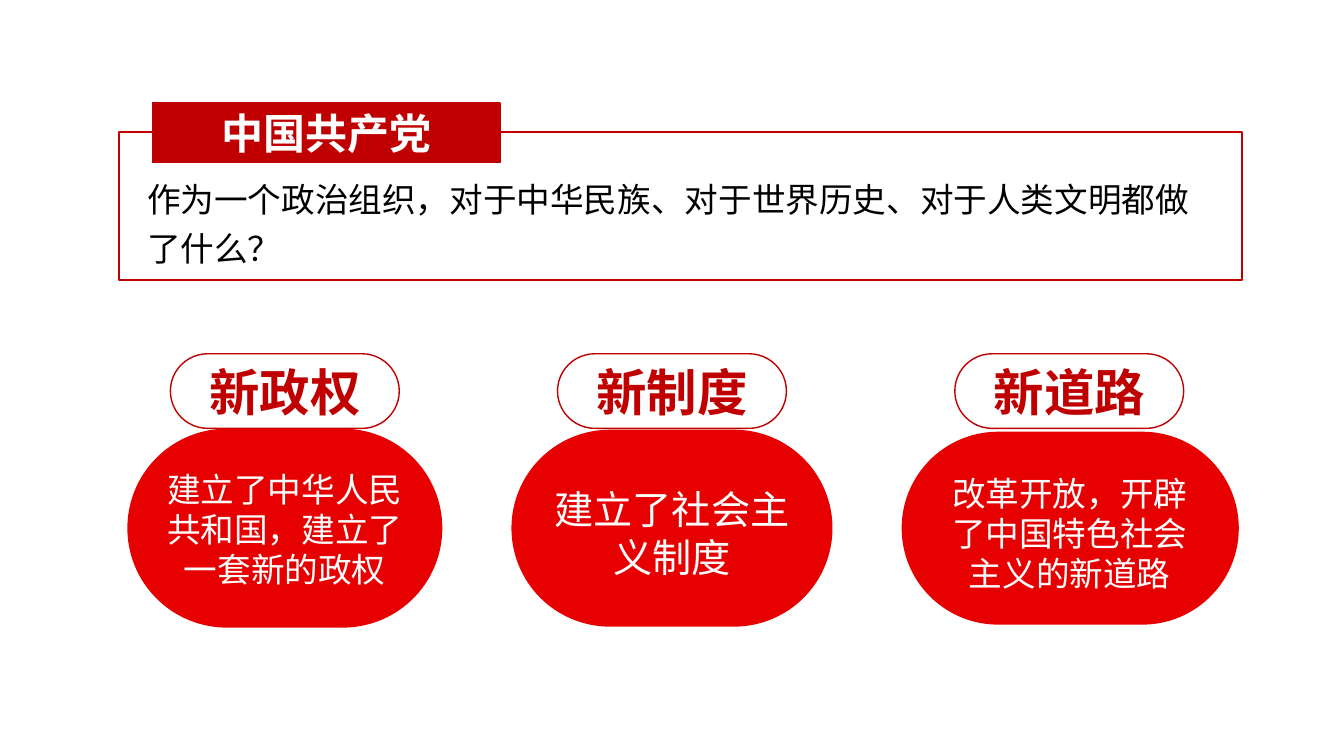
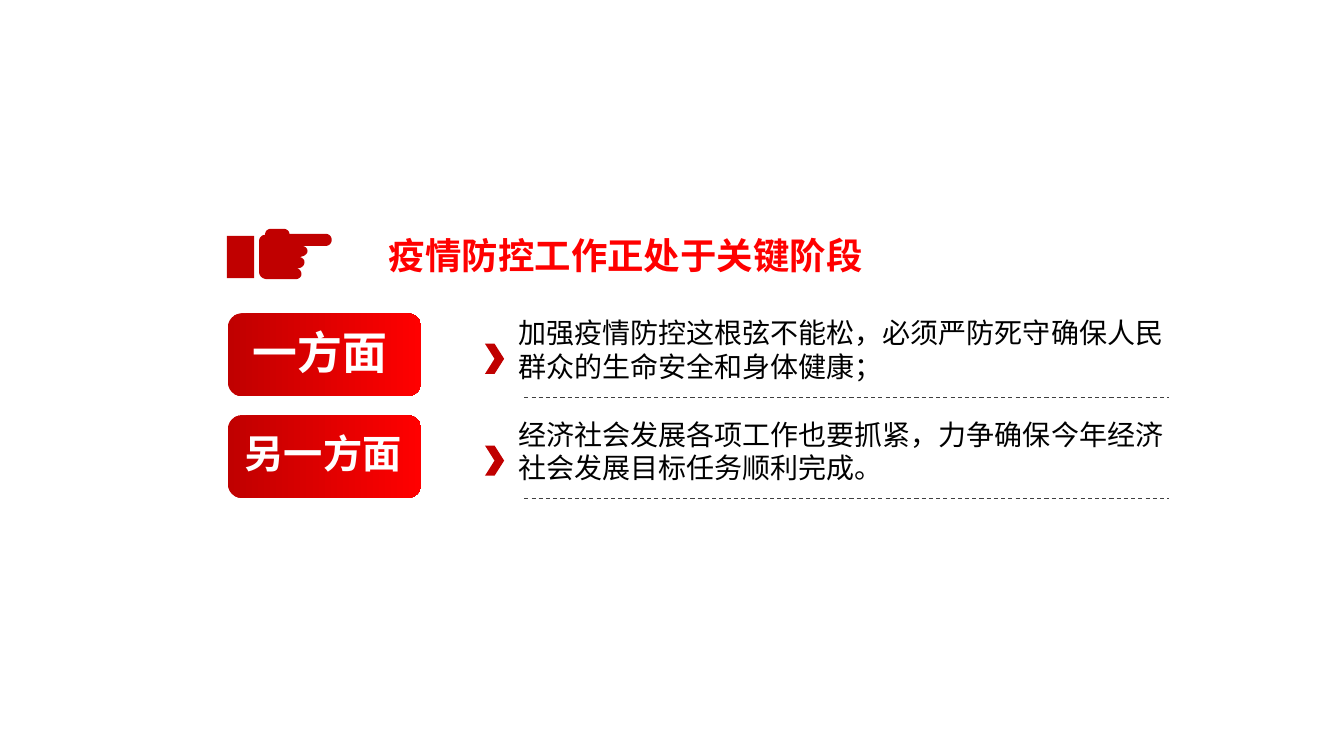
import math

from lxml import etree
from pptx import Presentation
from pptx.dml.color import RGBColor
from pptx.enum import dml, shapes, text
from pptx.oxml import ns
from pptx.util import Inches, Pt

FONT = "Noto Sans CJK SC"
COLORS = {
    "deep_red": "C00000",
    "red": "E60000",
    "bright_red": "FF0000",
    "rule": "404040",
    "white": "FFFFFF",
    "black": "000000",
}
SHAPE = shapes.MSO_SHAPE
CENTER = text.PP_ALIGN.CENTER

# Pill left, body box, text box, text size, heading, body text
ACHIEVEMENTS = [
    (1.69, (1.27, 4.26, 3.11, 1.96), (1.41, 4.6, 2.83, 1.31), 24,
     "新政权", "建立了中华人民共和国，建立了一套新的政权"),
    (5.53, (5.08, 4.27, 3.17, 1.94), (5.38, 4.77, 2.57, 1.04), 28,
     "新制度", "建立了社会主义制度"),
    (9.47, (8.95, 4.29, 3.33, 1.9), (9.21, 4.64, 2.8, 1.31), 24,
     "新道路", "改革开放，开辟了中国特色社会主义的新道路"),
]

# Label, label box, label size, body text
ASPECTS = [
    ("一方面", (2.03, 3.17, 2.29, 0.64), 32,
     "加强疫情防控这根弦不能松，必须严防死守确保人民群众的生命安全和身体健康；"),
    ("另一方面", (2.06, 4.21, 2.29, 0.57), 28,
     "经济社会发展各项工作也要抓紧，力争确保今年经济社会发展目标任务顺利完成。"),
]
ASPECT_TOP, ASPECT_STEP = 3.11, 1.01

# End point of each stretch; a second point is the corner that it rounds
HAND_START = (2.99, 2.72)
HAND_OUTLINE = [
    ((2.93, 2.66), (2.99, 2.66)), ((2.96, 2.66), None),
    ((3.02, 2.6), (3.02, 2.66)), ((2.96, 2.55), (3.02, 2.55)),
    ((3.05, 2.49), (3.05, 2.55)), ((2.99, 2.44), (3.05, 2.44)),
    ((3.23, 2.44), None), ((3.29, 2.38), (3.29, 2.44)),
    ((3.23, 2.32), (3.29, 2.32)), ((2.87, 2.32), None),
    ((2.81, 2.27), (2.87, 2.27)), ((2.69, 2.27), None),
    ((2.63, 2.32), (2.63, 2.27)), ((2.63, 2.33), None),
    ((2.57, 2.39), (2.57, 2.33)), ((2.57, 2.7), None),
    ((2.65, 2.77), (2.57, 2.77)), ((2.93, 2.77), None),
    ((2.99, 2.72), (2.99, 2.77)),
]


def rgb(color):
    return RGBColor.from_string(COLORS[color])


def lengths(values):
    return [Inches(value) for value in values]


def write(shape, words, size, color, bold=False, align=None, spacing=None):
    frame = shape.text_frame
    frame.word_wrap = True
    paragraph = frame.paragraphs[0]
    paragraph.alignment = align
    paragraph.line_spacing = spacing
    run = paragraph.add_run()
    run.text = words
    run.font.name = FONT
    run.font.size = Pt(size)
    run.font.bold = bold
    run.font.color.rgb = rgb(color)
    east_asian = etree.SubElement(run.font._element, ns.qn("a:ea"))
    east_asian.set("typeface", FONT)


def add_text(parent, box, words, size, color, **style):
    write(parent.add_textbox(*lengths(box)), words, size, color, **style)


def paint(shape, fill=None, line=None, width=1):
    shape.shadow.inherit = False
    if fill:
        shape.fill.solid()
        shape.fill.fore_color.rgb = rgb(fill)
    else:
        shape.fill.background()
    if line:
        shape.line.color.rgb = rgb(line)
        shape.line.width = Pt(width)
    else:
        shape.line.fill.background()


def add_box(parent, kind, box, **look):
    shape = parent.add_shape(kind, *lengths(box))
    paint(shape, **look)
    return shape


def add_pill(parent, box, **look):
    pill = add_box(parent, SHAPE.ROUNDED_RECTANGLE, box, **look)
    pill.adjustments[0] = 0.5
    return pill


def add_dashed_rule(parent, left, right, top):
    rule = parent.add_connector(
        shapes.MSO_CONNECTOR.STRAIGHT, *lengths((left, top, right, top)))
    rule.line.color.rgb = rgb("rule")
    rule.line.width = Pt(0.75)
    rule.line.dash_style = dml.MSO_LINE.DASH
    etree.SubElement(rule._element.spPr, ns.qn("a:effectLst"))


def quarter_arc(start, corner, end, steps=8):
    """Return points of the quarter ellipse that rounds a corner."""
    center = [a + b - c for a, b, c in zip(start, end, corner)]
    angles = [math.pi / 2 * step / steps for step in range(1, steps + 1)]
    return [
        tuple(c + (a - c) * math.cos(angle) + (b - c) * math.sin(angle)
              for a, b, c in zip(start, end, center))
        for angle in angles
    ]


def add_pointing_hand(parent):
    group = parent.add_group_shape().shapes
    points = []
    last = HAND_START
    for end, corner in HAND_OUTLINE:
        points += quarter_arc(last, corner, end) if corner else [end]
        last = end
    builder = group.build_freeform(*lengths(HAND_START))
    builder.add_line_segments([lengths(point) for point in points])
    paint(builder.convert_to_shape(), fill="deep_red")
    add_box(group, SHAPE.RECTANGLE, (2.25, 2.34, 0.27, 0.42), fill="deep_red")


def add_achievement(parent, pill_left, body_box, text_box, size, heading, body):
    pill = add_pill(parent, (pill_left, 3.51, 2.27, 0.74), line="deep_red")
    write(pill, heading, 36, "deep_red", bold=True, align=CENTER)
    add_pill(parent, body_box, fill="red", line="red")
    add_text(parent, text_box, body, size, "white", align=CENTER)


def add_aspect(parent, top, label, label_box, size, body):
    group = parent.add_group_shape().shapes
    badge = add_box(group, SHAPE.ROUNDED_RECTANGLE, (2.26, top, 1.92, 0.82))
    badge.fill.gradient()
    badge.fill.gradient_angle = 0
    for stop, color in zip(badge.fill.gradient_stops, ("deep_red", "bright_red")):
        stop.color.rgb = rgb(color)
    add_text(group, label_box, label, size, "white", bold=True, align=CENTER)
    add_text(parent, (5.04, top - 0.03, 6.76, 0.77), body, 20, "black")
    add_box(parent, SHAPE.CHEVRON, (4.81, top + 0.3, 0.19, 0.3), fill="deep_red")
    add_dashed_rule(parent, 5.2, 11.59, top + 0.83)


def build_achievements(slide):
    parent = slide.shapes
    add_box(parent, SHAPE.RECTANGLE, (1.18, 1.31, 11.14, 1.47),
            line="deep_red", width=1.5)
    add_text(parent, (1.36, 1.65, 10.81, 1.05),
             "作为一个政治组织，对于中华民族、对于世界历史、对于人类文明都做了什么？",
             24, "black", spacing=1.2)
    tag = add_box(parent, SHAPE.RECTANGLE, (1.51, 1.02, 3.45, 0.59),
                  fill="deep_red", line="deep_red")
    write(tag, "中国共产党", 30, "white", bold=True, align=CENTER)
    for achievement in ACHIEVEMENTS:
        add_achievement(parent, *achievement)


def build_aspects(slide):
    parent = slide.shapes
    add_pointing_hand(parent)
    add_text(parent, (3.76, 2.26, 5.63, 0.54), "疫情防控工作正处于关键阶段",
             26, "bright_red", bold=True)
    for index, aspect in enumerate(ASPECTS):
        add_aspect(parent, ASPECT_TOP + index * ASPECT_STEP, *aspect)


def main():
    presentation = Presentation()
    presentation.slide_width = Inches(13.33)
    presentation.slide_height = Inches(7.5)
    blank = presentation.slide_layouts[6]
    for build in (build_achievements, build_aspects):
        build(presentation.slides.add_slide(blank))
    presentation.save("out.pptx")


if __name__ == "__main__":
    main()
